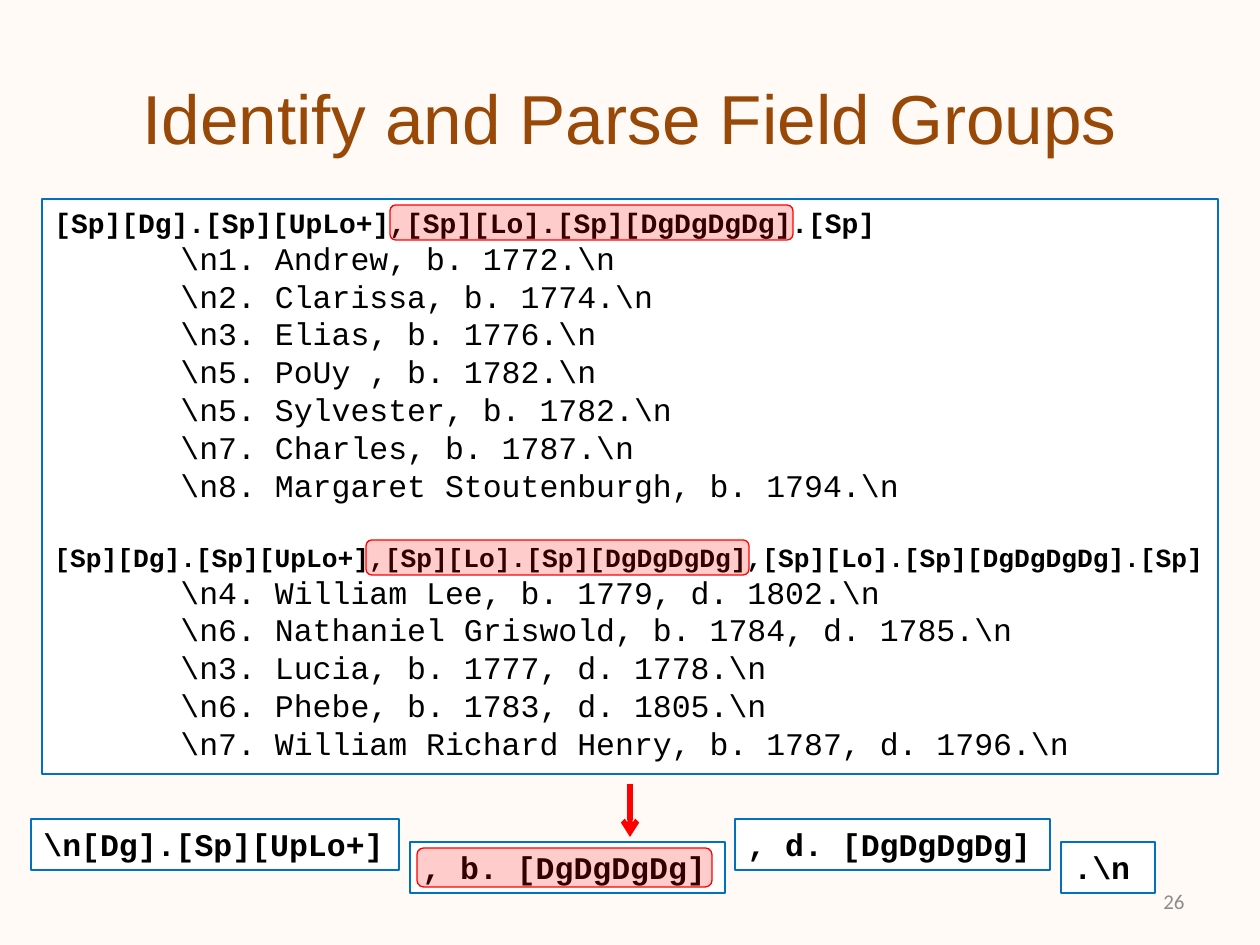
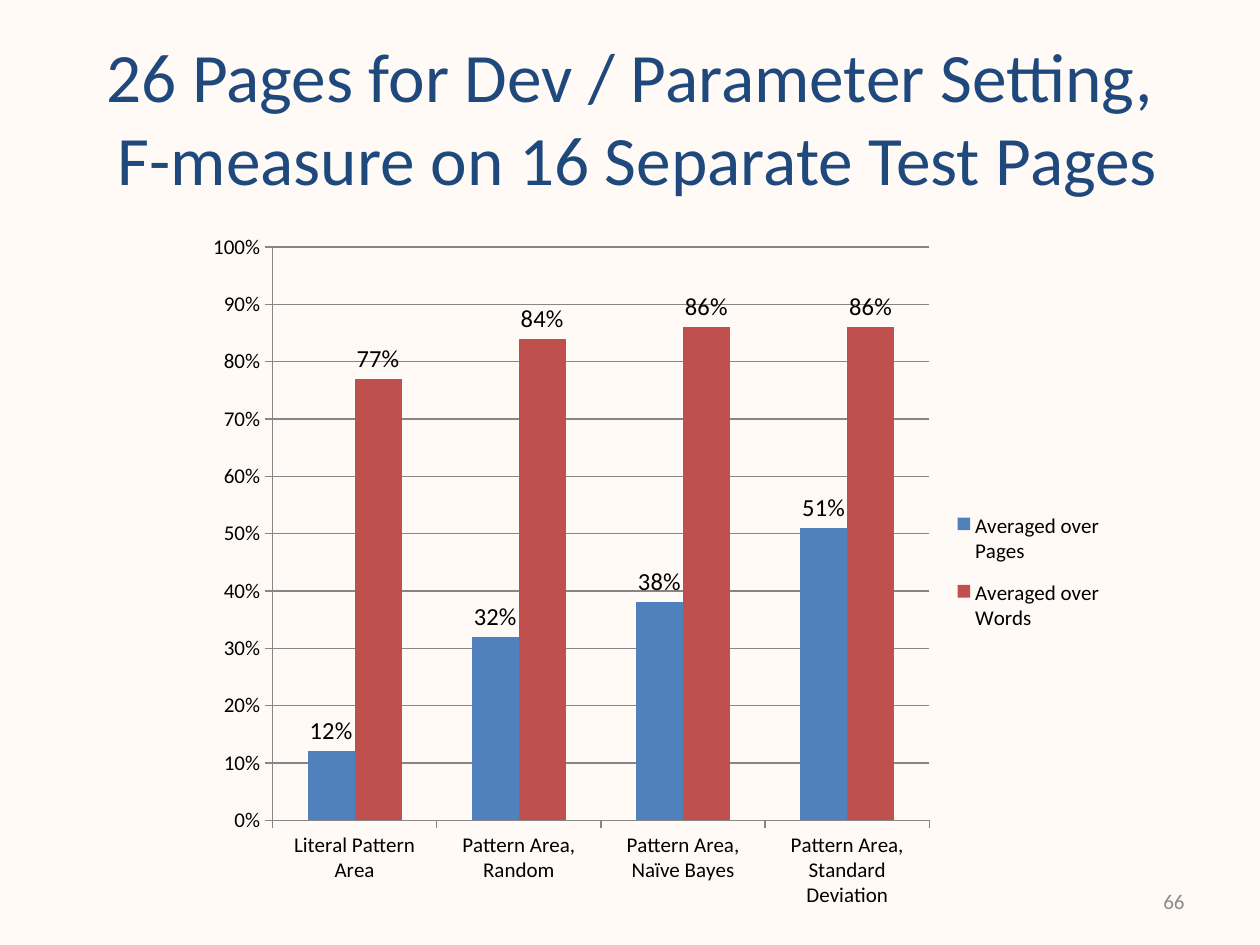
import pptx
import pptx.chart.data
import pptx.dml.color
import pptx.enum.chart
import pptx.enum.shapes
import pptx.enum.text
import pptx.oxml
import pptx.oxml.ns
import pptx.util
import lxml.etree

# Shared colours, fonts and scale
RGBColor = pptx.dml.color.RGBColor
CREAM = RGBColor(0xFF, 0xFA, 0xF6)
WHITE = RGBColor(0xFF, 0xFF, 0xFF)
BLACK = RGBColor(0x00, 0x00, 0x00)
BROWN = RGBColor(0x98, 0x48, 0x07)
NAVY = RGBColor(0x1F, 0x49, 0x7D)
GRAY = RGBColor(0x8C, 0x8C, 0x8C)
GRID_GRAY = RGBColor(0x86, 0x86, 0x86)
BOX_BLUE = RGBColor(0x00, 0x70, 0xC0)
RED = RGBColor(0xFF, 0x00, 0x00)
SERIES_BLUE = RGBColor(0x4F, 0x81, 0xBD)
SERIES_RED = RGBColor(0xC0, 0x50, 0x4D)

ALIGN = pptx.enum.text.PP_ALIGN
ANCHOR = pptx.enum.text.MSO_ANCHOR
SHAPE = pptx.enum.shapes.MSO_SHAPE
Pt = pptx.util.Pt
qn = pptx.oxml.ns.qn
SCALE = 914400 / 126
HAIRLINE = Pt(0)

TITLE_FORMAT = {"size": Pt(39.6)}
NUMBER_FORMAT = {"size": Pt(12), "name": "Calibri"}
CODE_FORMAT = {"size": Pt(18), "name": "Courier New", "bold": False}
PATTERN_FORMAT = {"name": "Courier New", "bold": True}


def px(*lengths):
    return [round(length * SCALE) for length in lengths]


def write(frame, lines, color, alignment=ALIGN.LEFT, anchor=ANCHOR.TOP):
    """Fill a text frame with (text, format, space before, indent) lines."""
    frame.word_wrap = True
    frame.vertical_anchor = anchor
    for index, (text, font_format, space_before, indent) in enumerate(lines):
        paragraph = frame.add_paragraph() if index else frame.paragraphs[0]
        paragraph.text = text
        paragraph.alignment = alignment
        paragraph.space_before = Pt(space_before)
        paragraph._p.get_or_add_pPr().set("marL", str(px(indent)[0]))
        for run in paragraph.runs:
            run.font.color.rgb = color
            for attribute, value in font_format.items():
                setattr(run.font, attribute, value)


presentation = pptx.Presentation()
presentation.slide_width, presentation.slide_height = px(1260, 945)

# Background, title and slide number of both slides
slides = []
for title, title_font, title_color, number in [
    ("Identify and Parse Field Groups", "Arial", BROWN, "26"),
    ("26 Pages for Dev / Parameter Setting,\v F-measure on 16 Separate Test Pages",
     "Calibri", NAVY, "66"),
]:
    slide = presentation.slides.add_slide(presentation.slide_layouts[6])
    slide.background.fill.solid()
    slide.background.fill.fore_color.rgb = CREAM
    title_box = slide.shapes.add_textbox(*px(63, 38, 1134, 157))
    write(title_box.text_frame, [(title, {**TITLE_FORMAT, "name": title_font}, 0, 0)],
          title_color, ALIGN.CENTER, ANCHOR.MIDDLE)
    number_box = slide.shapes.add_textbox(*px(903, 876, 294, 50))
    write(number_box.text_frame, [(number, NUMBER_FORMAT, 0, 0)], GRAY,
          ALIGN.RIGHT, ANCHOR.MIDDLE)
    slides.append(slide)
pattern_slide, chart_slide = slides

# Record groups, each under its pattern
groups = [
    ("[Sp][Dg].[Sp][UpLo+],[Sp][Lo].[Sp][DgDgDgDg].[Sp]", 16, 0, [
        "1. Andrew, b. 1772.",
        "2. Clarissa, b. 1774.",
        "3. Elias, b. 1776.",
        "5. PoUy , b. 1782.",
        "5. Sylvester, b. 1782.",
        "7. Charles, b. 1787.",
        "8. Margaret Stoutenburgh, b. 1794.",
    ]),
    ("[Sp][Dg].[Sp][UpLo+],[Sp][Lo].[Sp][DgDgDgDg],[Sp][Lo].[Sp][DgDgDgDg].[Sp]", 15, 21.5, [
        "4. William Lee, b. 1779, d. 1802.",
        "6. Nathaniel Griswold, b. 1784, d. 1785.",
        "3. Lucia, b. 1777, d. 1778.",
        "6. Phebe, b. 1783, d. 1805.",
        "7. William Richard Henry, b. 1787, d. 1796.",
    ]),
]
group_lines = []
for pattern, size, space_before, records in groups:
    group_lines.append((pattern, {**PATTERN_FORMAT, "size": Pt(size)}, space_before, 0))
    group_lines += [(f"\\n{record}\\n", CODE_FORMAT, 0, 126) for record in records]

# White boxes: the record groups and the four field groups
field_format = {**PATTERN_FORMAT, "size": Pt(18)}
for bounds, lines in [
    ((42, 199, 1176, 575), group_lines),
    ((31, 819, 368, 51), [("\\n[Dg].[Sp][UpLo+]", field_format, 0, 0)]),
    ((735, 819, 315, 51), [(", d. [DgDgDgDg]", field_format, 0, 0)]),
    ((1061, 842, 94, 51), [(".\\n", field_format, 0, 0)]),
    ((410, 842, 315, 51), [(", b. [DgDgDgDg]", field_format, 0, 0)]),
]:
    box = pattern_slide.shapes.add_shape(SHAPE.RECTANGLE, *px(*bounds))
    box.shadow.inherit = False
    box.fill.solid()
    box.fill.fore_color.rgb = WHITE
    box.line.color.rgb = BOX_BLUE
    box.line.width = HAIRLINE
    write(box.text_frame, lines, BLACK)

# Arrow from the records to the field groups
arrow = pattern_slide.shapes.add_connector(
    pptx.enum.shapes.MSO_CONNECTOR.STRAIGHT, *px(630, 784, 630, 837))
arrow.line.color.rgb = RED
arrow.line.width = Pt(3)
tail = lxml.etree.SubElement(arrow.line._get_or_add_ln(), qn("a:tailEnd"))
tail.set("type", "arrow")
lxml.etree.SubElement(arrow._element.spPr, qn("a:effectLst"))

# Translucent highlights on the shared birth field
for bounds in [(390, 205, 403, 35), (417, 848, 295, 39), (366, 540, 383, 35)]:
    highlight = pattern_slide.shapes.add_shape(SHAPE.ROUNDED_RECTANGLE, *px(*bounds))
    highlight.shadow.inherit = False
    highlight.fill.solid()
    highlight.fill.fore_color.rgb = RED
    color_element = highlight.fill._xPr.find(".//" + qn("a:srgbClr"))
    lxml.etree.SubElement(color_element, qn("a:alpha")).set("val", "20000")
    highlight.line.color.rgb = RED
    highlight.line.width = Pt(0.75)

# F-measure chart
chart_data = pptx.chart.data.CategoryChartData(number_format="0%")
chart_data.categories = ["Literal Pattern Area", "Pattern Area, Random",
                         "Pattern Area, Naïve Bayes", "Pattern Area, Standard Deviation"]
chart_data.add_series("Averaged over Pages", [0.12, 0.32, 0.38, 0.51])
chart_data.add_series("Averaged over Words", [0.77, 0.84, 0.86, 0.86])
chart = chart_slide.shapes.add_chart(
    pptx.enum.chart.XL_CHART_TYPE.COLUMN_CLUSTERED, *px(147, 221, 966, 724), chart_data).chart
chart.has_title = False
chart.has_legend = True
chart.legend.position = pptx.enum.chart.XL_LEGEND_POSITION.RIGHT
chart.legend.include_in_layout = False
plot = chart.plots[0]
plot.gap_width = 150
plot.overlap = 0
plot.vary_by_categories = False

# Series and their value labels
for series, color in zip(plot.series, [SERIES_BLUE, SERIES_RED]):
    series.format.fill.solid()
    series.format.fill.fore_color.rgb = color
    labels = series.data_labels
    for attribute, value in {
        "show_value": True,
        "number_format": "0%",
        "number_format_is_linked": False,
        "position": pptx.enum.chart.XL_LABEL_POSITION.OUTSIDE_END,
    }.items():
        setattr(labels, attribute, value)

# Axes
value_axis = chart.value_axis
for attribute, value in {"minimum_scale": 0, "maximum_scale": 1, "major_unit": 0.1,
                         "has_major_gridlines": True}.items():
    setattr(value_axis, attribute, value)
value_axis.tick_labels.number_format = "0%"
value_axis.tick_labels.number_format_is_linked = False
for line_owner in [value_axis, chart.category_axis, value_axis.major_gridlines]:
    line_owner.format.line.color.rgb = GRID_GRAY
    line_owner.format.line.width = Pt(0.75)
for axis in [value_axis, chart.category_axis]:
    axis.major_tick_mark = pptx.enum.chart.XL_TICK_MARK.OUTSIDE

# Chart fonts
chart_fonts = [(chart.font, 10), (chart.legend.font, 12), (value_axis.tick_labels.font, 12),
               (chart.category_axis.tick_labels.font, 12)]
chart_fonts += [(series.data_labels.font, 14) for series in plot.series]
for font, size in chart_fonts:
    font.name = "Calibri"
    font.size = Pt(size)
    font.color.rgb = BLACK

# Fixed places of the plot area and the legend, as shares of the chart
plot_area = chart._chartSpace.chart.plotArea
legend = chart.legend._element
for parent, position, target, bounds in [
    (plot_area, 0, [("layoutTarget", "inner")], (0.13, 0.036, 0.68, 0.792)),
    (legend, 1, [], (0.835, 0.38, 0.155, 0.21)),
]:
    for old_layout in parent.findall(qn("c:layout")):
        parent.remove(old_layout)
    layout = lxml.etree.Element(qn("c:layout"))
    manual_layout = lxml.etree.SubElement(layout, qn("c:manualLayout"))
    for tag, value in [*target, ("xMode", "edge"), ("yMode", "edge"), *zip("xywh", bounds)]:
        lxml.etree.SubElement(manual_layout, qn("c:" + tag)).set("val", str(value))
    parent.insert(position, layout)

presentation.save("out.pptx")
